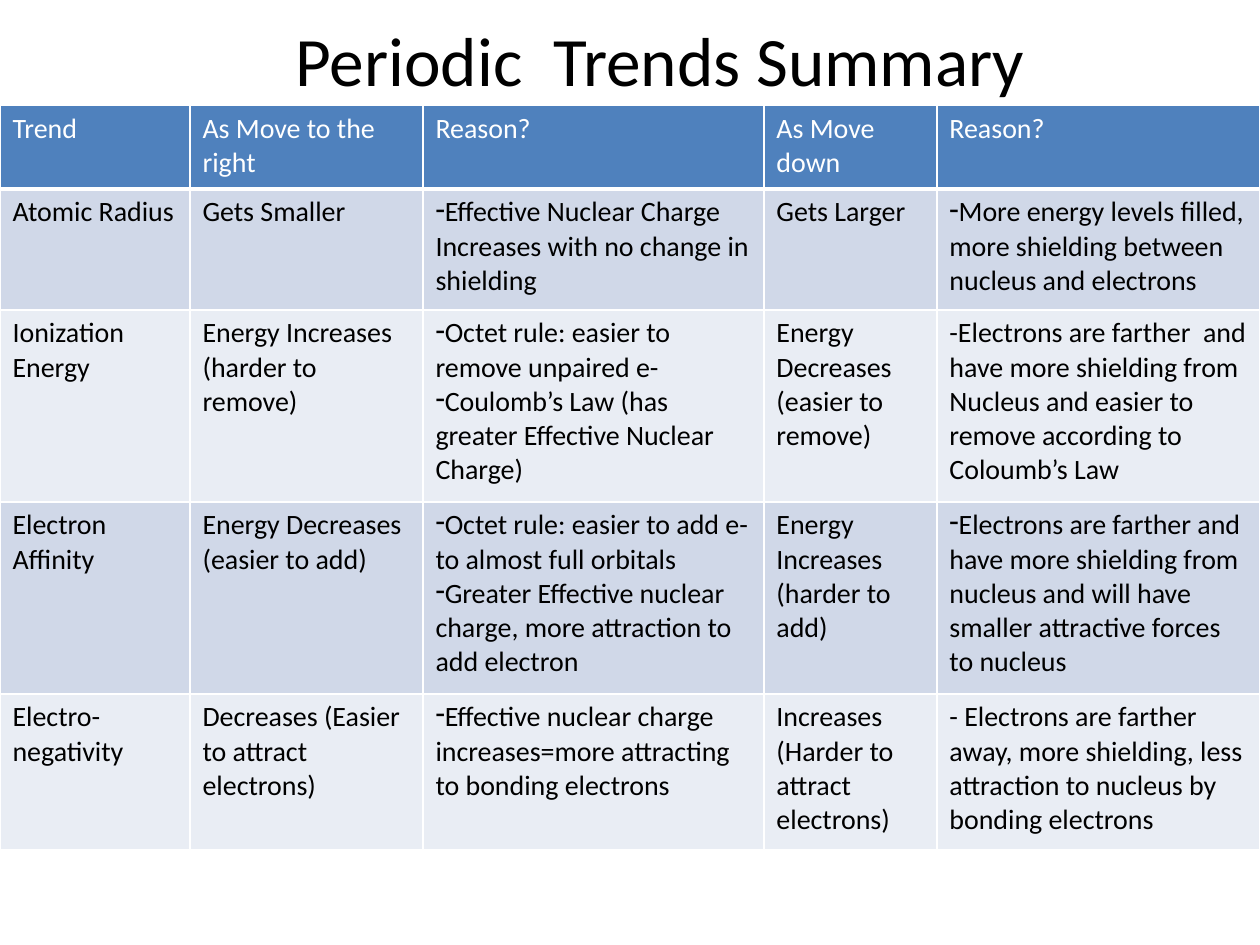
from lxml import etree
from pptx import Presentation
from pptx import util as u
from pptx.dml.color import RGBColor
from pptx.enum import text
from pptx.oxml import ns

PX = 914400 // 126
FONT = "Calibri"
HEADER_FILL = "4F81BD"
BAND_FILLS = ("E9EDF4", "D0D8E8")
COLUMN_WIDTHS = (190, 233, 341, 173, 323)
ROW_HEIGHTS = (84, 121, 192, 192, 156)

# A list holds bulleted paragraphs; a string is one plain paragraph.
TRENDS = (
    ("Trend", "As Move to the right", "Reason?", "As Move down", "Reason?"),
    ("Atomic Radius", "Gets Smaller",
     ["Effective Nuclear Charge Increases with no change in shielding"],
     "Gets Larger",
     ["More energy levels filled, more shielding between nucleus and electrons"]),
    ("Ionization Energy", "Energy Increases (harder to remove)",
     ["Octet rule: easier to remove unpaired e-",
      "Coulomb’s Law (has greater Effective Nuclear Charge)"],
     "Energy Decreases (easier to remove)",
     "-Electrons are farther  and have more shielding from Nucleus "
     "and easier to remove according to Coloumb’s Law"),
    ("Electron Affinity", "Energy Decreases (easier to add)",
     ["Octet rule: easier to add e- to almost full orbitals",
      "Greater Effective nuclear charge, more attraction to add electron"],
     "Energy Increases (harder to add)",
     ["Electrons are farther and have more shielding from nucleus "
      "and will have smaller attractive forces to nucleus"]),
    ("Electro-negativity", "Decreases (Easier to attract electrons)",
     ["Effective nuclear charge increases=more attracting to bonding electrons"],
     "Increases (Harder to attract electrons)",
     "- Electrons are farther away, more shielding, less attraction "
     "to nucleus by bonding electrons"),
)


def px(length):
    return u.Emu(length * PX)


def color(value):
    return RGBColor.from_string(value)


def format_runs(paragraph, size, ink):
    for run in paragraph.runs:
        run.font.name = FONT
        run.font.size = u.Pt(size)
        run.font.bold = False
        run.font.color.rgb = color(ink)


def add_title(slide, wording):
    title = slide.shapes.add_textbox(px(126), px(21), px(1037), px(76))
    frame = title.text_frame
    frame.word_wrap = True
    frame.vertical_anchor = text.MSO_ANCHOR.MIDDLE
    frame.text = wording
    heading = frame.paragraphs[0]
    heading.alignment = text.PP_ALIGN.CENTER
    format_runs(heading, 39.6, "000000")


def add_dash(paragraph):
    properties = paragraph._p.get_or_add_pPr()
    properties.set("marL", "0")
    properties.set("indent", "0")
    etree.SubElement(properties, ns.qn("a:buChar")).set("char", "-")


def set_borders(cell, bottom):
    properties = cell._tc.get_or_add_tcPr()
    for side, width in (("L", 1), ("R", 1), ("T", 1), ("B", bottom)):
        border = etree.SubElement(properties, ns.qn(f"a:ln{side}"))
        border.set("w", str(u.Pt(width)))
        fill = etree.SubElement(border, ns.qn("a:solidFill"))
        etree.SubElement(fill, ns.qn("a:srgbClr")).set("val", "FFFFFF")


def fill_cell(cell, content, fill, ink, bottom):
    set_borders(cell, bottom)
    cell.fill.solid()
    cell.fill.fore_color.rgb = color(fill)
    bulleted = isinstance(content, list)
    cell.text_frame.text = "\n".join(content) if bulleted else content
    for paragraph in cell.text_frame.paragraphs:
        if bulleted:
            add_dash(paragraph)
        format_runs(paragraph, 16, ink)


def add_trend_table(slide):
    table = slide.shapes.add_table(
        len(TRENDS), len(COLUMN_WIDTHS), 0, px(105),
        px(sum(COLUMN_WIDTHS)), px(sum(ROW_HEIGHTS))).table
    for column, width in zip(table.columns, COLUMN_WIDTHS):
        column.width = px(width)
    for index, (row, height) in enumerate(zip(table.rows, ROW_HEIGHTS)):
        row.height = px(height)
        if index == 0:
            look = HEADER_FILL, "FFFFFF", 3
        else:
            look = BAND_FILLS[index % 2], "000000", 1
        for cell, content in zip(row.cells, TRENDS[index]):
            fill_cell(cell, content, *look)


def main():
    deck = Presentation()
    deck.slide_width, deck.slide_height = px(1260), px(945)
    slide = deck.slides.add_slide(deck.slide_layouts[6])
    add_title(slide, "  Periodic  Trends Summary")
    add_trend_table(slide)
    deck.save("out.pptx")


if __name__ == "__main__":
    main()
